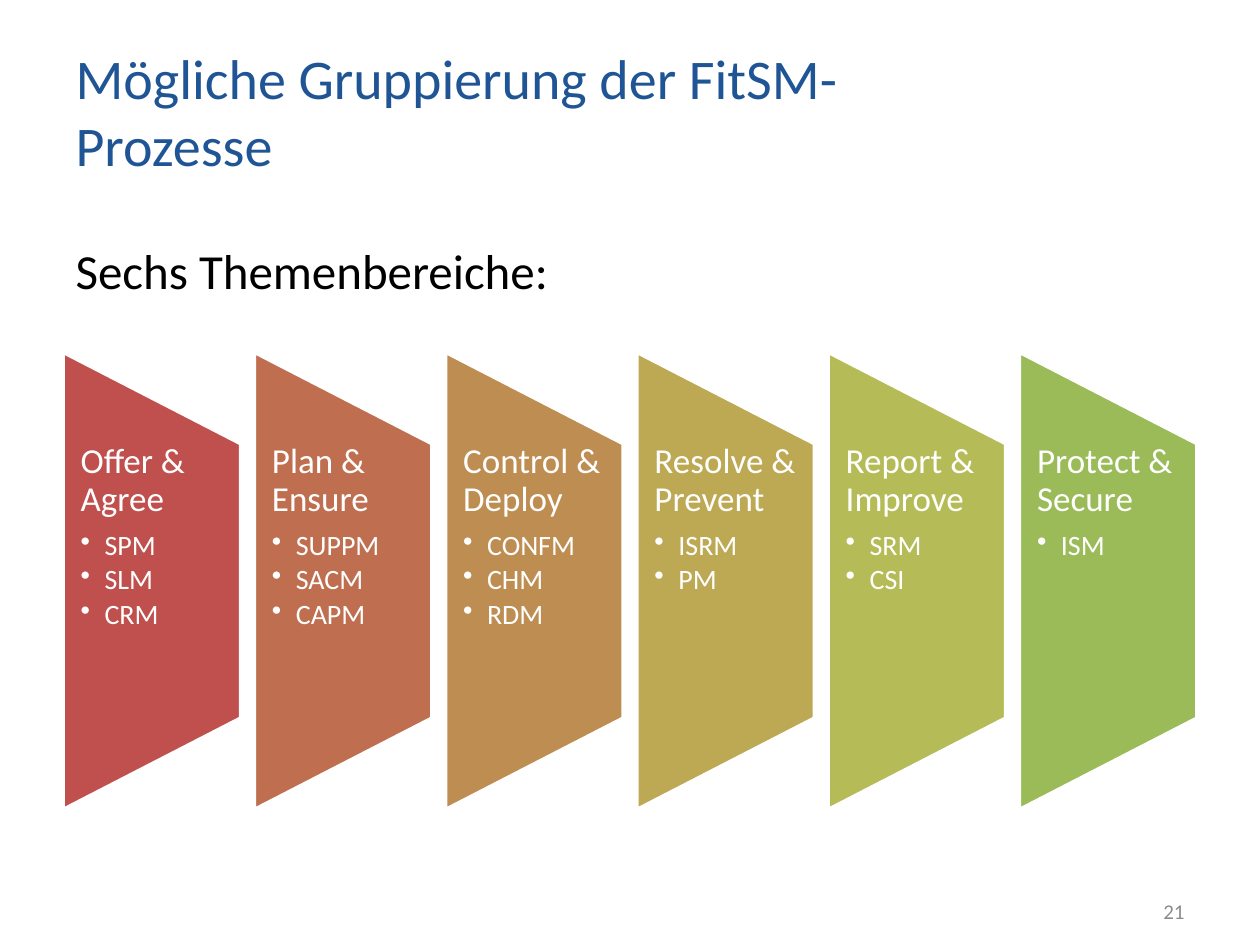
"""Build the slide that groups the FitSM processes into six topic areas."""
from lxml.etree import SubElement
from pptx import Presentation
from pptx.dml.color import RGBColor
from pptx.enum.shapes import MSO_SHAPE as Shape
from pptx.enum.text import MSO_ANCHOR as Anchor, PP_ALIGN as Align
from pptx.oxml.ns import qn
from pptx.util import Inches, Pt


def color(hex_code):
    return RGBColor.from_string(hex_code)


def style(paragraph, size, hex_code):
    paragraph.font.name = "Calibri"
    paragraph.font.size = Pt(size)
    paragraph.font.color.rgb = color(hex_code)


AREAS = [
    ("Offer & Agree", "C0504D", ["SPM", "SLM", "CRM"]),
    ("Plan & Ensure", "BF6F4F", ["SUPPM", "SACM", "CAPM"]),
    ("Control & Deploy", "BE8D52", ["CONFM", "CHM", "RDM"]),
    ("Resolve & Prevent", "BDA954", ["ISRM", "PM"]),
    ("Report & Improve", "B5BC57", ["SRM", "CSI"]),
    ("Protect & Secure", "9BBB59", ["ISM"]),
]
LEFT, TOTAL_WIDTH, WIDTH, HEIGHT, MIDDLE = 0.5, 9, 1.41, 3.63, 4.61
STEP = (TOTAL_WIDTH - WIDTH) / (len(AREAS) - 1)

deck = Presentation()
deck.slide_width, deck.slide_height = Inches(10), Inches(7.5)
slide = deck.slides.add_slide(deck.slide_layouts[1])

title = slide.shapes.title
title.left, title.top = Inches(LEFT), Inches(0.3)
title.width, title.height = Inches(7.72), Inches(1.15)
title.text_frame.text = "Mögliche Gruppierung der FitSM-Prozesse"
title.text_frame.vertical_anchor = Anchor.MIDDLE
heading = title.text_frame.paragraphs[0]
heading.alignment = Align.LEFT
style(heading, 32, "205595")

body = slide.placeholders[1]
body.left, body.top = Inches(LEFT), Inches(1.86)
body.width, body.height = Inches(TOTAL_WIDTH), Inches(5.06)
body.text_frame.text = "Sechs Themenbereiche:"
intro = body.text_frame.paragraphs[0]
intro.space_before = Pt(0)
intro_props = intro._p.get_or_add_pPr()
intro_props.set("marL", "0")
intro_props.set("indent", "0")
SubElement(intro_props, qn("a:buNone"))
style(intro, 28, "000000")

page_number = slide.shapes.add_textbox(Inches(7.17), Inches(7.03), Inches(2.33), Inches(0.4))
page_number.text_frame.word_wrap = True
page_number.text_frame.vertical_anchor = Anchor.MIDDLE
page_number.text_frame.text = "21"
number = page_number.text_frame.paragraphs[0]
number.alignment = Align.RIGHT
style(number, 12, "8C8C8C")

for index, (area, fill, processes) in enumerate(AREAS):
    left = LEFT + index * STEP
    panel = slide.shapes.add_shape(
        Shape.FLOWCHART_MANUAL_OPERATION,
        Inches(left + (WIDTH - HEIGHT) / 2), Inches(MIDDLE - WIDTH / 2),
        Inches(HEIGHT), Inches(WIDTH))
    panel.rotation = 270
    panel.shadow.inherit = False
    panel.fill.solid()
    panel.fill.fore_color.rgb = color(fill)
    panel.line.color.rgb = color("FFFFFF")
    panel.line.width = Pt(2)

    label = slide.shapes.add_textbox(Inches(left), Inches(3.52), Inches(WIDTH), Inches(2.18))
    frame = label.text_frame
    frame.word_wrap = True
    frame.margin_left = frame.margin_right = Inches(0.14)
    frame.margin_top = frame.margin_bottom = 0
    frame.text = area
    name = frame.paragraphs[0]
    name.line_spacing, name.space_after = 0.9, Pt(7)
    style(name, 20, "FFFFFF")

    for process in processes:
        item = frame.add_paragraph()
        item.text = process
        item.level = 1
        item.line_spacing, item.space_after = 0.9, Pt(2.4)
        item_props = item._p.get_or_add_pPr()
        item_props.set("marL", str(Inches(0.19)))
        item_props.set("indent", str(-Inches(0.19)))
        SubElement(item_props, qn("a:buChar"), char="•")
        style(item, 16, "FFFFFF")

deck.save("out.pptx")
